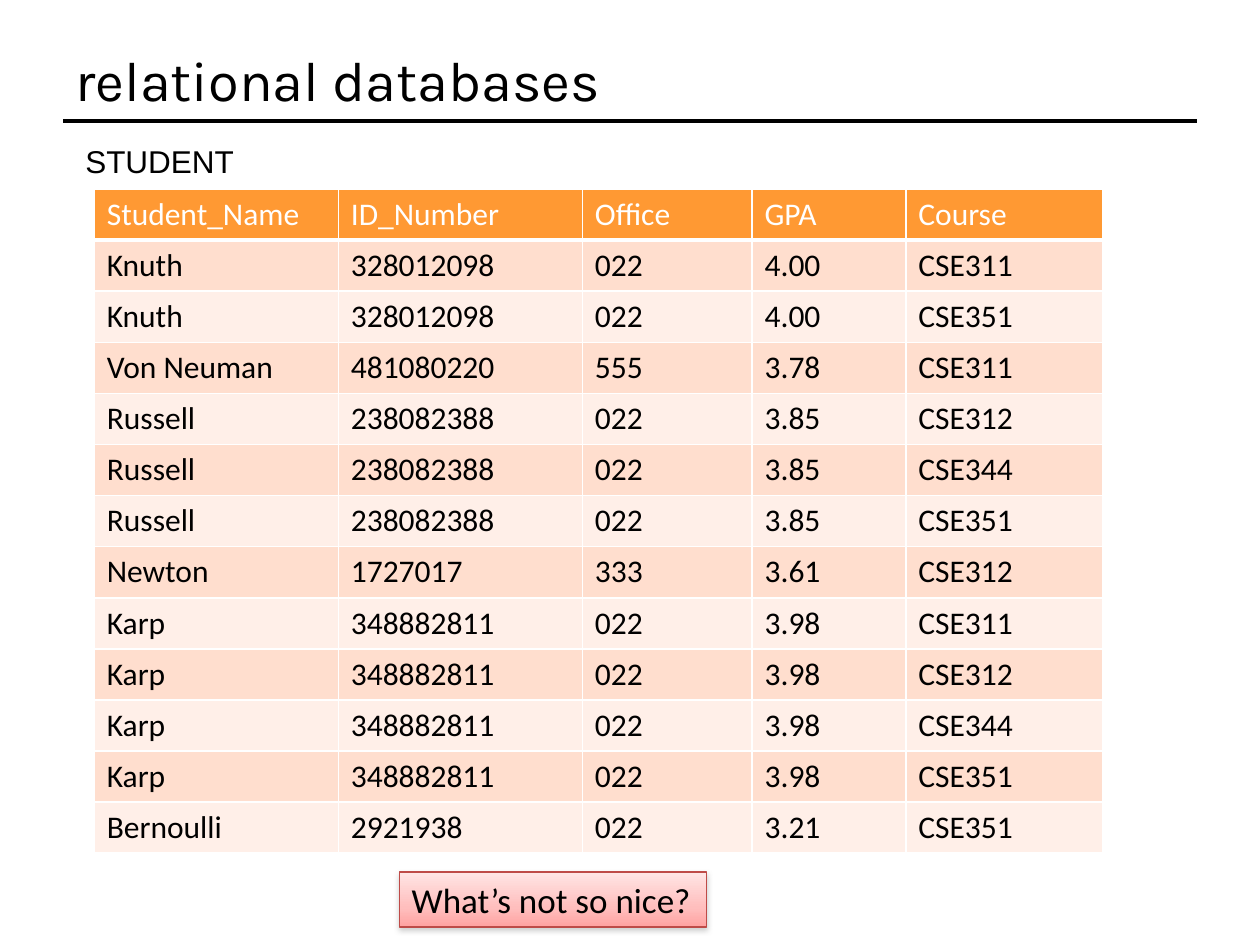
from dataclasses import dataclass

from lxml.etree import SubElement
from pptx import Presentation
from pptx.dml.color import RGBColor
from pptx.enum.shapes import MSO_CONNECTOR as Connector, MSO_SHAPE as Shape
from pptx.enum.text import MSO_ANCHOR as Anchor, MSO_AUTO_SIZE as AutoSize
from pptx.oxml import parse_xml
from pptx.oxml.ns import nsdecls, qn
from pptx.util import Cm, Pt

BLACK, WHITE = "000000", "FFFFFF"
HEADER_FILL = "FF9933"
BAND_FILLS = ("FFDECE", "FFEFE8")
COLUMN_WIDTHS = (4.92, 4.92, 3.42, 3.1, 3.96)
ROW_HEIGHT = 1.03
HEADINGS = ("Student_Name", "ID_Number", "Office", "GPA", "Course")


@dataclass
class Student:
    name: str
    number: str
    office: str
    gpa: str
    courses: tuple[str, ...]


@dataclass
class Label:
    text: str
    left: float
    top: float
    width: float
    height: float
    font: str
    size: float
    wrap: bool = False
    anchor: Anchor = Anchor.TOP


STUDENTS = (
    Student("Knuth", "328012098", "022", "4.00", ("CSE311", "CSE351")),
    Student("Von Neuman", "481080220", "555", "3.78", ("CSE311",)),
    Student("Russell", "238082388", "022", "3.85", ("CSE312", "CSE344", "CSE351")),
    Student("Newton", "1727017", "333", "3.61", ("CSE312",)),
    Student("Karp", "348882811", "022", "3.98", ("CSE311", "CSE312", "CSE344", "CSE351")),
    Student("Bernoulli", "2921938", "022", "3.21", ("CSE351",)),
)

TITLE = Label("relational databases", 1.27, 0.76, 22.86, 1.68, "Karla", 32, True, Anchor.MIDDLE)
TABLE_NAME = Label("STUDENT", 1.47, 2.74, 3.53, 1.02, "Arial", 18)
QUESTION = Label("What’s not so nice?", 8.05, 17.58, 6.2, 1.11, "Calibri", 20)


def color(code: str) -> RGBColor:
    return RGBColor.from_string(code)


def write(text_frame, text: str, font: str, size: float, code: str) -> None:
    text_frame.text = text
    para = text_frame.paragraphs[0]
    for span in para.runs:
        span.font.name = font
        span.font.size = Pt(size)
        span.font.bold = False
        span.font.color.rgb = color(code)


def fill_label(shape, label: Label) -> None:
    frame = shape.text_frame
    write(frame, label.text, label.font, label.size, BLACK)
    frame.word_wrap = label.wrap
    frame.auto_size = AutoSize.NONE if label.wrap else AutoSize.SHAPE_TO_FIT_TEXT
    frame.vertical_anchor = label.anchor


def frame_of(label: Label) -> tuple:
    return Cm(label.left), Cm(label.top), Cm(label.width), Cm(label.height)


def add_label(page, label: Label) -> None:
    fill_label(page.shapes.add_textbox(*frame_of(label)), label)


def add_rule(page) -> None:
    rule = page.shapes.add_connector(Connector.STRAIGHT, Cm(1.27), Cm(2.44), Cm(24.13), Cm(2.44))
    rule.line.color.rgb = color(BLACK)
    rule.line.width = Pt(2)
    SubElement(rule._element.spPr, qn("a:effectLst"))


def set_borders(cell, bottom: float) -> None:
    properties = cell._tc.get_or_add_tcPr()
    widths = {"lnL": 1, "lnR": 1, "lnT": 1, "lnB": bottom}
    for position, (side, width) in enumerate(widths.items()):
        border = parse_xml(
            f'<a:{side} {nsdecls("a")} w="{Pt(width)}"><a:solidFill>'
            f'<a:srgbClr val="{WHITE}"/></a:solidFill></a:{side}>'
        )
        properties.insert(position, border)


def add_student_table(page) -> None:
    rows = [HEADINGS] + [
        (student.name, student.number, student.office, student.gpa, course)
        for student in STUDENTS
        for course in student.courses
    ]
    table = page.shapes.add_table(
        len(rows), len(HEADINGS), Cm(1.9), Cm(3.81),
        Cm(sum(COLUMN_WIDTHS)), Cm(ROW_HEIGHT * len(rows)),
    ).table
    for column, width in zip(table.columns, COLUMN_WIDTHS):
        column.width = Cm(width)
    for index, values in enumerate(rows):
        table.rows[index].height = Cm(ROW_HEIGHT)
        is_header = index == 0
        fill = HEADER_FILL if is_header else BAND_FILLS[(index - 1) % 2]
        for cell, value in zip(table.rows[index].cells, values):
            write(cell.text_frame, value, "Calibri", 18, WHITE if is_header else BLACK)
            cell.fill.solid()
            cell.fill.fore_color.rgb = color(fill)
            set_borders(cell, bottom=3 if is_header else 1)


def add_question(page, label: Label) -> None:
    box = page.shapes.add_shape(Shape.RECTANGLE, *frame_of(label))
    fill_label(box, label)
    box.line.color.rgb = color("BE4B48")
    box.line.width = Pt(0.75)

    # Three-stop gradient running downwards
    stops = "".join(
        f'<a:gs pos="{percent * 1000}"><a:srgbClr val="{code}"/></a:gs>'
        for percent, code in ((0, "FFE5E5"), (65, "FFBEBD"), (100, "FFA2A1"))
    )
    properties = box._element.spPr
    properties.find(qn("a:prstGeom")).addnext(parse_xml(
        f'<a:gradFill {nsdecls("a")} rotWithShape="1"><a:gsLst>{stops}</a:gsLst>'
        '<a:lin ang="5400000" scaled="0"/></a:gradFill>'
    ))

    # Soft shadow below
    properties.append(parse_xml(
        f'<a:effectLst {nsdecls("a")}><a:outerShdw blurRad="{Pt(3.1)}" dist="{Pt(1.6)}" '
        'dir="5400000" rotWithShape="0"><a:srgbClr val="808080"><a:alpha val="38000"/>'
        '</a:srgbClr></a:outerShdw></a:effectLst>'
    ))


def main() -> None:
    deck = Presentation()
    deck.slide_width, deck.slide_height = Cm(25.4), Cm(19.05)
    page = deck.slides.add_slide(deck.slide_layouts[6])

    # Heading
    add_rule(page)
    add_label(page, TITLE)

    # Table with its name, and the question below
    add_student_table(page)
    add_question(page, QUESTION)
    add_label(page, TABLE_NAME)

    deck.save("out.pptx")


if __name__ == "__main__":
    main()
